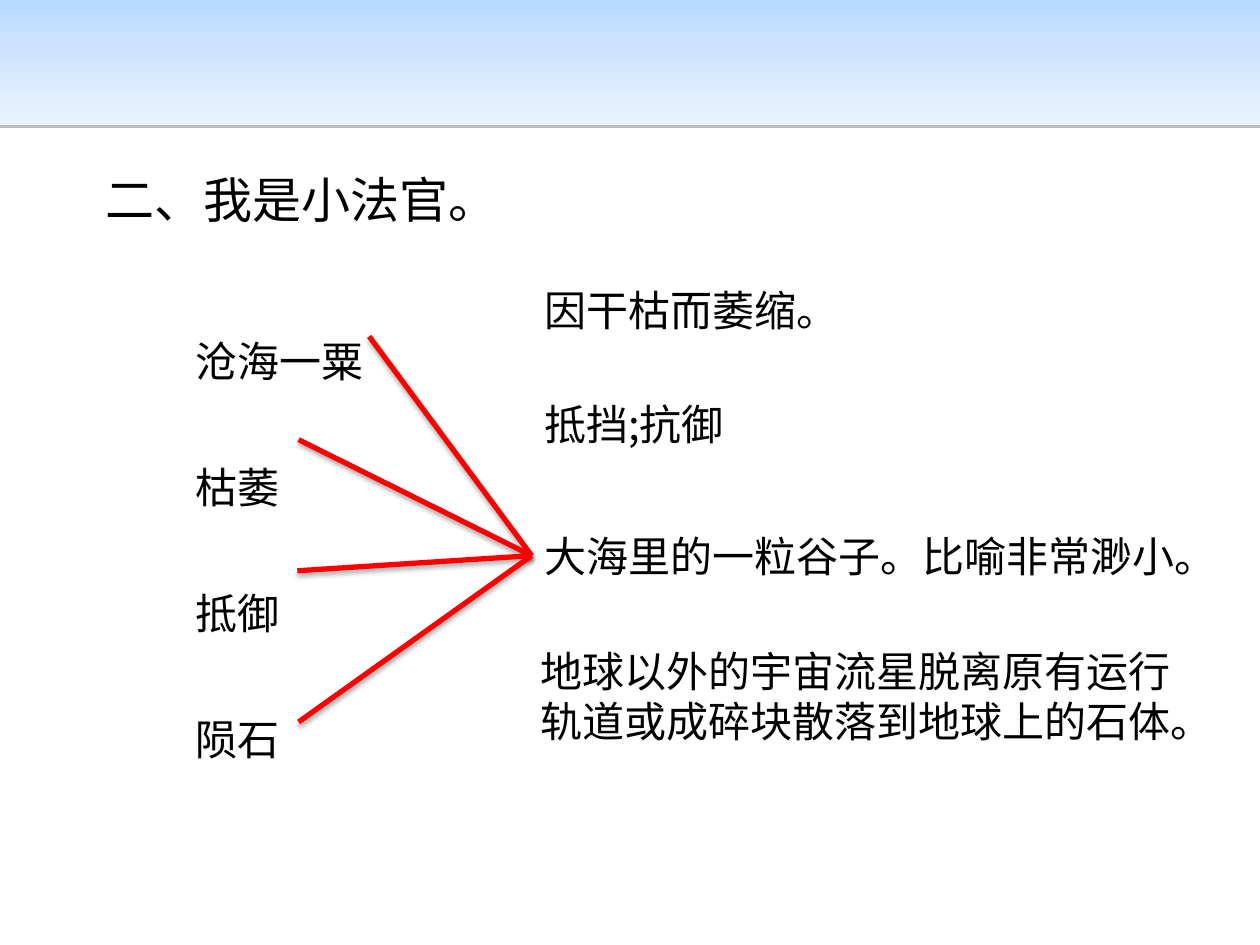
from copy import deepcopy

from lxml import etree
from pptx import Presentation
from pptx.dml.color import RGBColor
from pptx.enum import shapes, text
from pptx.oxml import ns
from pptx.util import Inches, Pt

BLACK = RGBColor(0x00, 0x00, 0x00)
RED = RGBColor(0xFF, 0x00, 0x00)
BANNER_STOPS = [
    (0, RGBColor(0xB7, 0xD9, 0xFF)),
    (0.35, RGBColor(0xCB, 0xE3, 0xFF)),
    (1, RGBColor(0xE8, 0xF3, 0xFF)),
]
FONT = "Noto Sans CJK SC"

prs = Presentation()
prs.slide_width, prs.slide_height = Inches(10), Inches(7.5)
slide = prs.slides.add_slide(prs.slide_layouts[6])


def add_text(lines, left, top, width, height, size=24, spacing=None, indent=0):
    box = slide.shapes.add_textbox(Inches(left), Inches(top), Inches(width), Inches(height))
    frame = box.text_frame
    frame.word_wrap = True
    frame.auto_size = text.MSO_AUTO_SIZE.SHAPE_TO_FIT_TEXT
    frame.text = lines
    for paragraph in frame.paragraphs:
        paragraph.line_spacing = spacing
        if indent:
            paragraph._p.get_or_add_pPr().set("indent", str(Inches(indent)))
        for run in paragraph.runs:
            run.font.size = Pt(size)
            run.font.name = FONT
            run.font.color.rgb = BLACK
            east_asian = etree.SubElement(run.font._element, ns.qn("a:ea"))
            east_asian.set("typeface", FONT)


def add_shadow(shape, alpha, blur, distance):
    properties = shape._element.spPr
    effects = etree.SubElement(properties, ns.qn("a:effectLst"))
    outer = etree.SubElement(effects, ns.qn("a:outerShdw"), blurRad=str(Pt(blur)),
                             dist=str(Pt(distance)), dir="5400000", rotWithShape="0")
    color = etree.SubElement(outer, ns.qn("a:srgbClr"), val=str(BLACK))
    etree.SubElement(color, ns.qn("a:alpha"), val=str(alpha * 1000))


# Banner with a three-stop gradient
banner = slide.shapes.add_shape(shapes.MSO_SHAPE.RECTANGLE, 0, 0, Inches(10), Inches(0.99))
banner.fill.gradient()
banner.fill.gradient_angle = 270
stop_list = banner._element.spPr.find(".//" + ns.qn("a:gsLst"))
stop_list.append(deepcopy(stop_list[-1]))
for stop, (position, color) in zip(banner.fill.gradient_stops, BANNER_STOPS):
    stop.position = position
    stop.color.rgb = color
banner.line.fill.background()
add_shadow(banner, alpha=25, blur=0, distance=1.6)

# Heading and words to match
add_text("二、我是小法官。", 0.74, 1.06, 3.34, 0.81, size=28, spacing=1.5)
add_text("沧海一粟\n枯萎\n抵御\n陨石", 0.74, 2.01, 2.35, 4.14, spacing=2.5, indent=0.71)

# Meanings
for meaning, left, top, width, height in [
    ("因干枯而萎缩。", 4.22, 2.21, 2.56, 0.5),
    ("抵挡;抗御", 4.22, 3.11, 1.72, 0.5),
    ("大海里的一粒谷子。比喻非常渺小。", 4.22, 4.16, 5.59, 0.5),
    ("地球以外的宇宙流星脱离原有运行轨道或成碎块散落到地球上的石体。", 4.19, 5.07, 5.2, 1.31),
]:
    add_text(meaning, left, top, width, height)

# Lines from each word to the shared meeting point
for word_x, word_y in [(2.93, 2.67), (2.37, 3.49), (2.36, 4.53), (2.37, 5.73)]:
    match_line = slide.shapes.add_connector(
        shapes.MSO_CONNECTOR.STRAIGHT,
        Inches(word_x), Inches(word_y), Inches(4.22), Inches(4.41))
    match_line.line.color.rgb = RED
    match_line.line.width = Pt(3)
    add_shadow(match_line, alpha=35, blur=3.1, distance=1.8)

prs.save("out.pptx")
